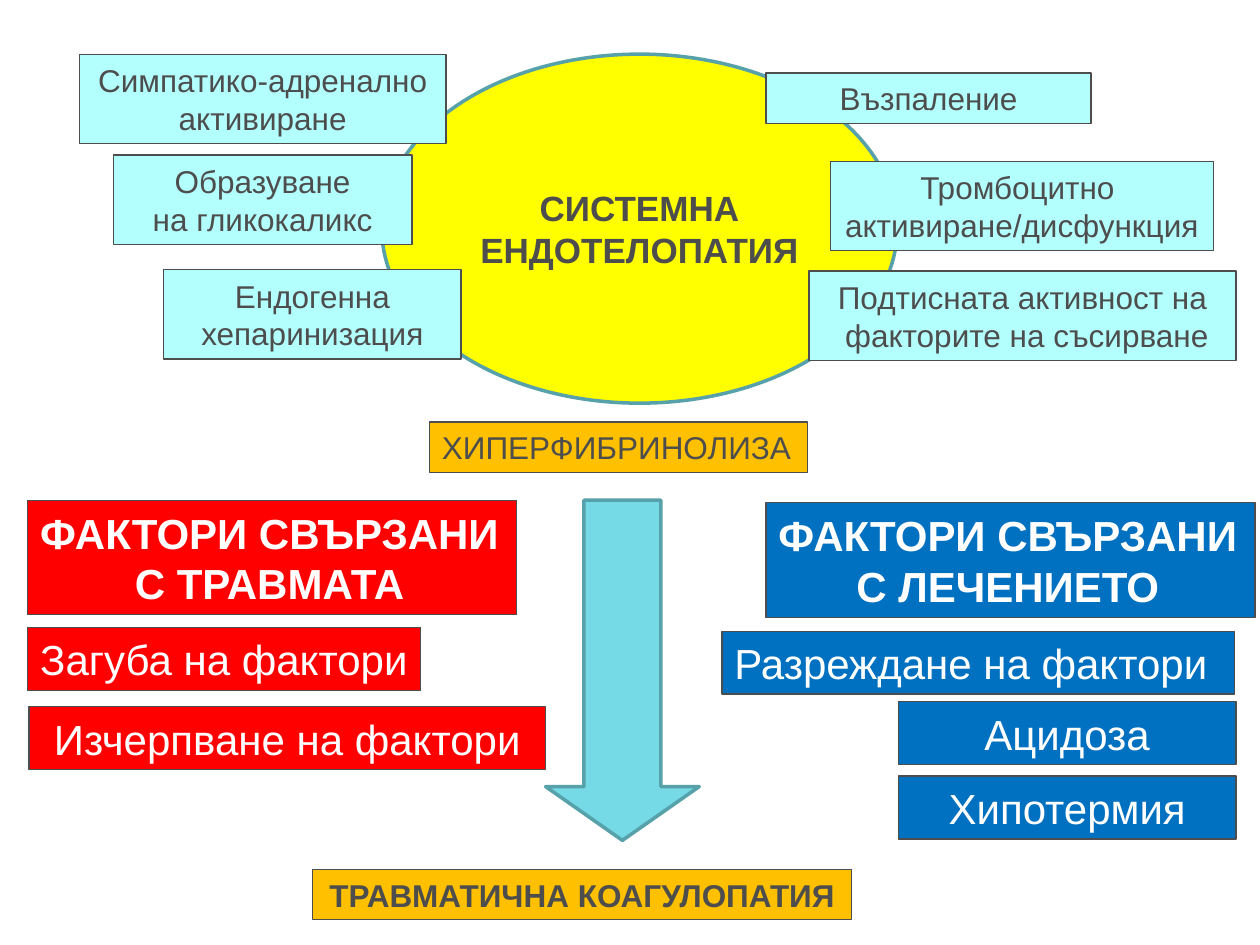
from pptx import Presentation
from pptx.dml.color import RGBColor
from pptx.enum.shapes import MSO_SHAPE
from pptx.enum.text import MSO_ANCHOR, MSO_AUTO_SIZE, PP_ALIGN
from pptx.util import Inches, Pt

RECT, OVAL, ARROW = MSO_SHAPE.RECTANGLE, MSO_SHAPE.OVAL, MSO_SHAPE.DOWN_ARROW
LEFT, CENTER = PP_ALIGN.LEFT, PP_ALIGN.CENTER

FONT = "Arial"
GREY, WHITE, TEAL = "4D4D4D", "FFFFFF", "57A1AA"
YELLOW, TURQUOISE = "FFFF00", "75DAE6"

# Box height by text size and number of lines
HEIGHTS = {(18, 1): 0.4, (18, 2): 0.71, (24, 1): 0.5, (24, 2): 0.91}

# Look of each group: fill, text colour, text size, bold
STYLES = {
    "mechanism": ("B3FFFD", GREY, 18, False),
    "result": ("FFC000", GREY, 18, False),
    "outcome": ("FFC000", GREY, 18, True),
    "trauma head": ("FF0000", WHITE, 24, True),
    "trauma": ("FF0000", WHITE, 24, False),
    "treatment head": ("0070C0", WHITE, 24, True),
    "treatment": ("0070C0", WHITE, 24, False),
}

# Style, left, top, width, lines, alignment of the first line
BOXES = [
    ("trauma head", 0.22, 3.97, 3.88, ["ФАКТОРИ СВЪРЗАНИ", "С ТРАВМАТА"], LEFT),
    ("result", 3.41, 3.35, 3, ["ХИПЕРФИБРИНОЛИЗА"], LEFT),
    ("mechanism", 0.63, 0.43, 2.91, ["Симпатико-адренално", "активиране"], CENTER),
    ("outcome", 2.48, 6.9, 4.28, ["ТРАВМАТИЧНА КОАГУЛОПАТИЯ"], CENTER),
    ("trauma", 0.22, 4.98, 3.12, ["Загуба на фактори"], LEFT),
    ("trauma", 0.23, 5.61, 4.1, ["Изчерпване на фактори"], CENTER),
    ("treatment head", 6.08, 3.99, 3.88, ["ФАКТОРИ СВЪРЗАНИ", "С ЛЕЧЕНИЕТО"], LEFT),
    ("treatment", 5.73, 5.01, 4.07, ["Разреждане на фактори"], LEFT),
    ("treatment", 7.13, 5.57, 2.68, ["Ацидоза"], CENTER),
    ("treatment", 7.13, 6.16, 2.68, ["Хипотермия"], CENTER),
    ("mechanism", 6.08, 0.58, 2.58, ["Възпаление"], CENTER),
    ("mechanism", 1.3, 2.14, 2.36, ["Ендогенна", "хепаринизация"], CENTER),
    ("mechanism", 0.9, 1.23, 2.37, ["Образуване", "на гликокаликс"], CENTER),
    ("mechanism", 6.59, 1.28, 3.04, ["Тромбоцитно ", "активиране/дисфункция"], CENTER),
    ("mechanism", 6.42, 2.15, 3.39,
     ["Подтисната активност на", " факторите на съсирване"], CENTER),
]
NO_WRAP = ("trauma head", "treatment head", "result")


def rgb(value):
    return RGBColor.from_string(value)


def add_figure(s, kind, place, fill, line, weight):
    sp = s.shapes.add_shape(kind, *map(Inches, place))
    sp.shadow.inherit = False
    sp.fill.solid()
    sp.fill.fore_color.rgb = rgb(fill)
    sp.line.color.rgb = rgb(line)
    sp.line.width = Pt(weight)
    return sp


def write(sp, lines, color, size, bold, first_align=CENTER, wrap=True):
    tf = sp.text_frame
    tf.word_wrap = wrap
    tf.vertical_anchor = MSO_ANCHOR.MIDDLE
    for i, text in enumerate(lines):
        p = tf.add_paragraph() if i else tf.paragraphs[0]
        p.alignment = CENTER if i else first_align
        r = p.add_run()
        r.text = text
        r.font.name = FONT
        r.font.size = Pt(size)
        r.font.bold = bold
        r.font.color.rgb = rgb(color)


def add_box(s, style, left, top, width, lines, align):
    fill, color, size, bold = STYLES[style]
    place = (left, top, width, HEIGHTS[size, len(lines)])
    sp = add_figure(s, RECT, place, fill, GREY, 0.75)
    write(sp, lines, color, size, bold, align, style not in NO_WRAP)
    sp.text_frame.auto_size = MSO_AUTO_SIZE.SHAPE_TO_FIT_TEXT


def main():
    prs = Presentation()
    prs.slide_width, prs.slide_height = Inches(10), Inches(7.5)
    s = prs.slides.add_slide(prs.slide_layouts[6])

    core = add_figure(s, OVAL, (3.03, 0.43, 4.09, 2.77), YELLOW, TEAL, 2)
    write(core, ["СИСТЕМНА ЕНДОТЕЛОПАТИЯ"], GREY, 20, True)

    arrow = add_figure(s, ARROW, (4.33, 3.97, 1.22, 2.7), TURQUOISE, TEAL, 2)
    arrow.adjustments[0] = 0.5
    arrow.adjustments[1] = 0.35

    for box in BOXES:
        add_box(s, *box)
    prs.save("out.pptx")


if __name__ == "__main__":
    main()
